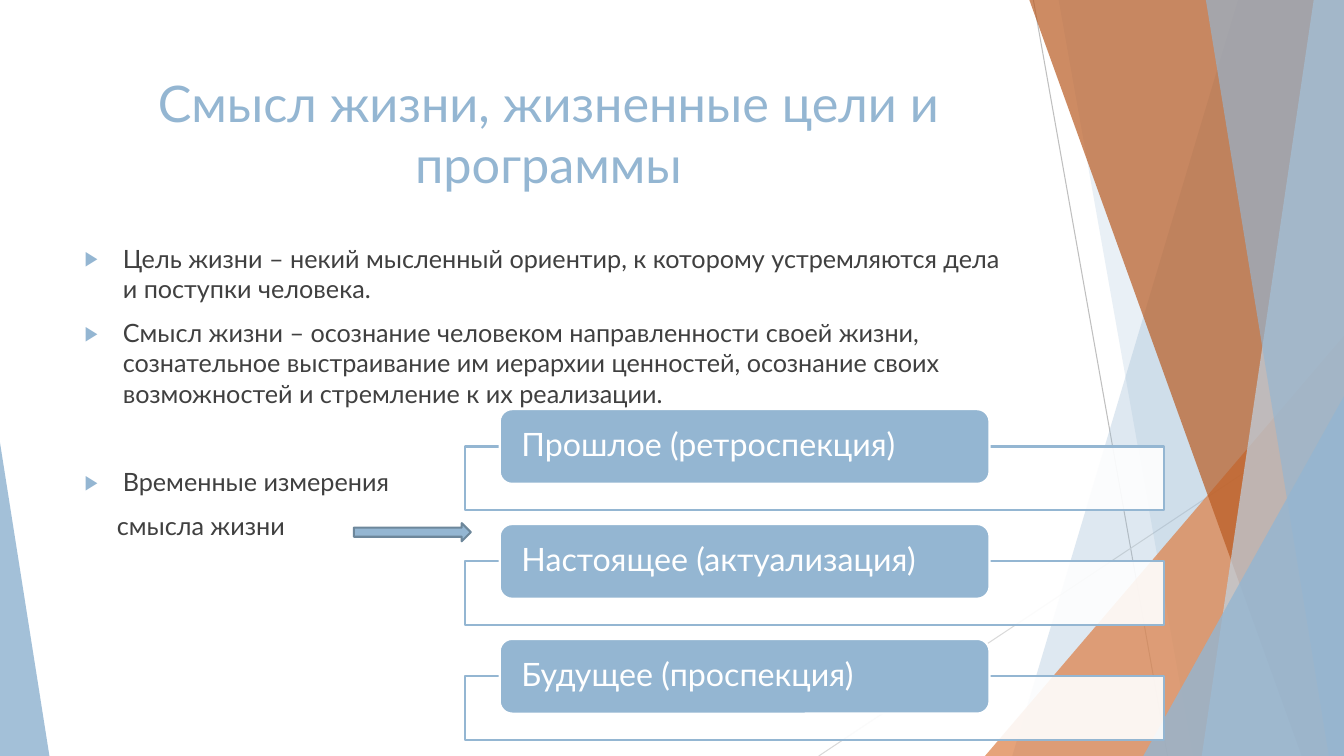
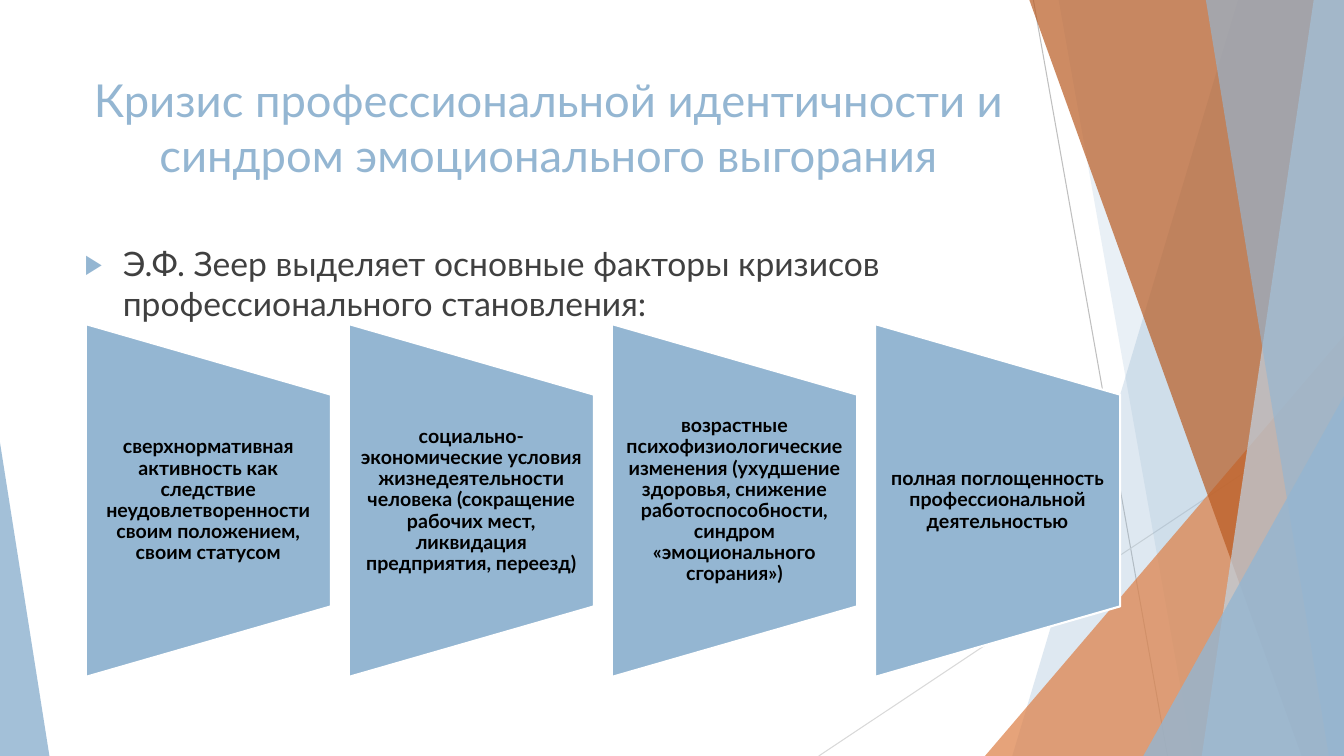
from collections import namedtuple
from lxml.etree import SubElement
from pptx import Presentation
from pptx.dml.color import RGBColor
from pptx.enum.shapes import MSO_CONNECTOR, MSO_SHAPE
from pptx.enum.text import MSO_ANCHOR, PP_ALIGN
from pptx.oxml.ns import qn
from pptx.util import Inches, Pt

WIDE, HIGH = Inches(13.33), Inches(7.5)
FONT = "Lato"
INK = {"blue": "94B6D2", "pale": "BFD3E4", "steel": "6D879B",
       "orange": "DD8047", "rust": "B95B22", "white": "FFFFFF",
       "black": "000000", "text": "404040", "mid": "BFBFBF", "light": "D9D9D9"}

Box = namedtuple("Box", "x y w h")


def area(x, y, w, h):
    """Box given in percent of the slide's size."""
    return Box(*(round(share * side / 100) for share, side in
                 zip((x, y, w, h), (WIDE, HIGH, WIDE, HIGH))))


def part(box, x, y, w, h):
    """Box given in shares of another box."""
    return Box(round(box.x + x * box.w), round(box.y + y * box.h),
               round(w * box.w), round(h * box.h))


HEAD = area(5.55, 8.93, 70.52, 19.2)
BODY = area(5.55, 31.47, 70.52, 56.53)
TABS = area(34.58, 54.13, 52.06, 43.73)
ARROW = area(26.33, 69.2, 8.7, 2.4)
FUNNELS = area(6.38, 42.87, 76.97, 46.67)

LINES = [(76.89, 0, 86.87, 100, "mid"), (100, 53.73, 60.92, 100, "light")]
# Bands: left edge at the top and at the foot. Peaks: left, top, width, apex.
FACETS = [("band", (92.12, 75.32), "blue", 30),
          ("band", (78.77, 88.75), "blue", 20),
          ("peak", (73.29, 44.4, 26.71, 1), "orange", 72),
          ("band", (76.59, 96.85), "rust", 70),
          ("band", (97.75, 89.42), "pale", 70),
          ("band", (89.72, 98.87), "blue", 65),
          ("peak", (85.07, 52.4, 14.93, 1), "blue", 80),
          ("peak", (0, 58.53, 3.68, 0), "blue", 85)]


def rgb(name):
    return RGBColor.from_string(INK[name])


def paint(shape, fill, alpha=100, line=None):
    shape.shadow.inherit = False
    shape.fill.solid()
    shape.fill.fore_color.rgb = rgb(fill)
    if alpha < 100:
        tint = shape.fill._xPr.find(f".//{qn('a:srgbClr')}")
        SubElement(tint, qn("a:alpha"), val=str(alpha * 1000))
    if line:
        shape.line.color.rgb = rgb(line)
        shape.line.width = Pt(1.5)
    else:
        shape.line.fill.background()


def preset(slide, kind, box, fill, alpha=100, line=None):
    shape = slide.shapes.add_shape(kind, *box)
    paint(shape, fill, alpha, line)
    return shape


def write(par, text, size, ink, bold=False):
    run = par.add_run()
    run.text = text
    font = run.font
    font.name, font.size, font.bold = FONT, Pt(size), bold
    font.color.rgb = rgb(ink)


def frame(shape, inset=0.1, rim=0.05, anchor=MSO_ANCHOR.TOP):
    text = shape.text_frame
    text.word_wrap = True
    text.margin_left = text.margin_right = Inches(inset)
    text.margin_top = text.margin_bottom = Inches(rim)
    text.vertical_anchor = anchor
    return text


def bullet(par):
    props = par._p.get_or_add_pPr()
    props.set("marL", str(Inches(0.38)))
    props.set("indent", str(-Inches(0.38)))
    tint = SubElement(props, qn("a:buClr"))
    SubElement(tint, qn("a:srgbClr"), val=INK["blue"])
    SubElement(props, qn("a:buSzPct"), val="80000")
    SubElement(props, qn("a:buFont"), typeface=FONT)
    SubElement(props, qn("a:buChar"), char="▶")


def band(slide, top, foot):
    pen = slide.shapes.build_freeform(round(top * WIDE / 100), 0)
    pen.add_line_segments([(WIDE, 0), (WIDE, HIGH),
                           (round(foot * WIDE / 100), HIGH)], close=True)
    return pen.convert_to_shape()


def peak(slide, left, top, wide, apex):
    shape = slide.shapes.add_shape(MSO_SHAPE.ISOSCELES_TRIANGLE,
                                   *area(left, top, wide, 100 - top))
    shape.adjustments[0] = apex
    return shape


def decor(slide):
    for x, y, right, foot, ink in LINES:
        start, end = area(x, y, 0, 0), area(right, foot, 0, 0)
        line = slide.shapes.add_connector(MSO_CONNECTOR.STRAIGHT, start.x,
                                          start.y, end.x, end.y)
        line.line.color.rgb = rgb(ink)
        line.line.width = Pt(0.75)
        SubElement(line._element.spPr, qn("a:effectLst"))
    draw = {"band": band, "peak": peak}
    for kind, place, ink, alpha in FACETS:
        paint(draw[kind](slide, *place), ink, alpha)


def title(slide, box, text, size):
    par = frame(slide.shapes.add_textbox(*box)).paragraphs[0]
    par.alignment = PP_ALIGN.CENTER
    write(par, text, size, "blue")


def body(slide, box, items, size):
    """Items are (text, space before, whether it has a bullet)."""
    text = frame(slide.shapes.add_textbox(*box))
    for i, (words, space, marked) in enumerate(items):
        par = text.add_paragraph() if i else text.paragraphs[0]
        par.space_before = Pt(space)
        if marked:
            bullet(par)
        else:
            par._p.get_or_add_pPr().set("marL", str(Inches(0.32)))
        write(par, words, size, "text")


def tabs(slide, box, names):
    """Stack of framed cards, each with a rounded tab on its upper edge."""
    tall = 0.305
    step = (1 - tall) / (len(names) - 1)
    for i, name in enumerate(names):
        row = part(box, 0, i * step, 1, tall)
        preset(slide, MSO_SHAPE.RECTANGLE, part(row, 0, 0.37, 1, 0.63),
               "white", 90, "blue")
        tab = preset(slide, MSO_SHAPE.ROUNDED_RECTANGLE,
                     part(row, 0.05, 0, 0.7, 0.74), "blue", line="white")
        par = frame(tab, 0.18, 0, MSO_ANCHOR.MIDDLE).paragraphs[0]
        par.alignment = PP_ALIGN.LEFT
        par.line_spacing = 0.9
        write(par, name, 23, "white")


def funnels(slide, box, texts):
    """Row of trapezoids that narrow to the right."""
    wide = 0.237
    step = (1 - wide) / (len(texts) - 1)
    for i, words in enumerate(texts):
        cell = part(box, i * step, 0, wide, 1)
        shift = (cell.h - cell.w) // 2
        turned = Box(cell.x - shift, cell.y + shift, cell.h, cell.w)
        shape = preset(slide, MSO_SHAPE.FLOWCHART_MANUAL_OPERATION, turned,
                       "blue", line="white")
        shape.rotation = 270
        label = slide.shapes.add_textbox(*part(cell, 0, 0.2, 1, 0.6))
        par = frame(label, 0.1, 0, MSO_ANCHOR.MIDDLE).paragraphs[0]
        par.alignment = PP_ALIGN.CENTER
        par.line_spacing = 0.9
        write(par, words, 14, "black", True)


def page(deck, name, size):
    slide = deck.slides.add_slide(deck.slide_layouts[6])
    decor(slide)
    title(slide, HEAD, name, size)
    return slide


def goals(deck):
    slide = page(deck, "Смысл жизни, жизненные цели и программы", 36)
    body(slide, BODY, [
        ("Цель жизни – некий мысленный ориентир, к которому устремляются "
         "дела и поступки человека.", 10, True),
        ("Смысл жизни – осознание человеком направленности своей жизни, "
         "сознательное выстраивание им иерархии ценностей, осознание своих "
         "возможностей и стремление к их реализации.", 10, True),
        ("Временные измерения", 41.6, True),
        ("смысла жизни", 10, False)], 18)
    tabs(slide, TABS, ["Прошлое (ретроспекция)", "Настоящее (актуализация)",
                       "Будущее (проспекция)"])
    preset(slide, MSO_SHAPE.RIGHT_ARROW, ARROW, "blue", line="steel")


def crisis(deck):
    slide = page(deck, "Кризис профессиональной идентичности и синдром "
                 "эмоционального выгорания", 32.4)
    body(slide, BODY, [("Э.Ф. Зеер выделяет основные факторы кризисов "
                        "профессионального становления:", 10, True)], 24)
    funnels(slide, FUNNELS, [
        "сверхнормативная активность как следствие неудовлетворенности "
        "своим положением, своим статусом",
        "социально-экономические условия жизнедеятельности человека "
        "(сокращение рабочих мест, ликвидация предприятия, переезд)",
        "возрастные психофизиологические изменения (ухудшение здоровья, "
        "снижение работоспособности, синдром «эмоционального сгорания»)",
        "полная поглощенность профессиональной деятельностью"])


def main():
    deck = Presentation()
    deck.slide_width, deck.slide_height = WIDE, HIGH
    goals(deck)
    crisis(deck)
    deck.save("out.pptx")


if __name__ == "__main__":
    main()
